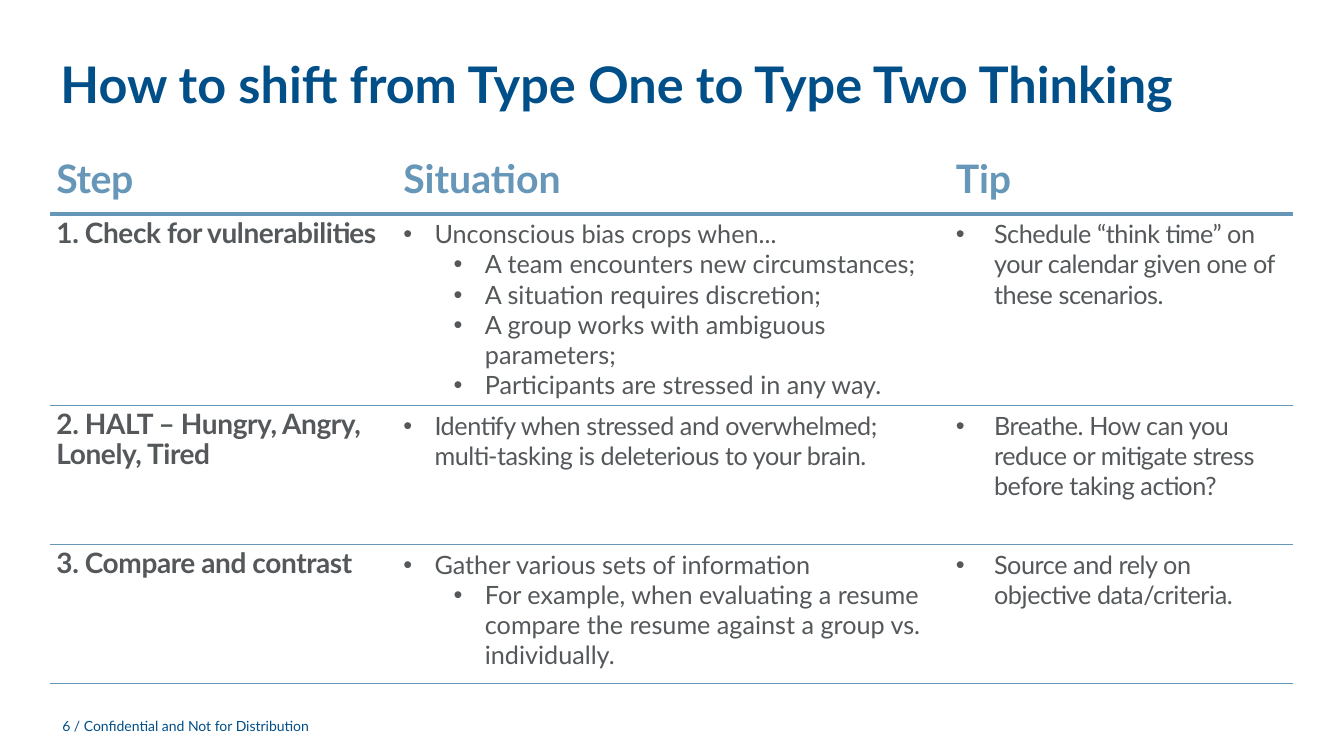
from lxml import etree
from pptx import Presentation
from pptx.dml.color import RGBColor
from pptx.enum.text import MSO_ANCHOR, PP_ALIGN
from pptx.oxml.ns import qn
from pptx.util import Inches, Pt

LEFT = PP_ALIGN.LEFT
TOP = MSO_ANCHOR.TOP
MIDDLE = MSO_ANCHOR.MIDDLE
TITLE_ONLY = 5
FONT = "Lato"
TIGHT = -30
COLORS = {"navy": "014F88", "blue": "6696B8", "gray": "54585A"}

COLUMN_WIDTHS = [3.44, 5.48, 3.4]
ROW_HEIGHTS = [0.66, 1.89, 1.38, 1.38]
HEADINGS = ["Step", "Situation", "Tip"]
STEPS = [
    (
        "1. Check for vulnerabilities",
        [
            "Unconscious bias crops when...",
            "A team encounters new circumstances;",
            "A situation requires discretion;",
            "A group works with ambiguous parameters;",
            "Participants are stressed in any way.",
        ],
        "Schedule “think time” on your calendar given one of these scenarios.",
    ),
    (
        "2. HALT – Hungry, Angry, Lonely, Tired",
        ["Identify when stressed and overwhelmed; multi-tasking is deleterious to your brain."],
        "Breathe. How can you reduce or mitigate stress before taking action?",
    ),
    (
        "3. Compare and contrast",
        [
            "Gather various sets of information",
            "For example, when evaluating a resume compare the resume against a group vs. individually.",
        ],
        "Source and rely on objective data/criteria.",
    ),
]


def style(paragraph, size, color, bold=False, tracking=0):
    paragraph.alignment = LEFT
    font = paragraph.font
    font.name = FONT
    font.size = Pt(size)
    font.bold = bold
    font.color.rgb = RGBColor.from_string(COLORS[color])
    if tracking:
        paragraph._p.pPr.find(qn("a:defRPr")).set("spc", str(tracking))


def add_bullet(paragraph, indent, hanging):
    properties = paragraph._p.get_or_add_pPr()
    properties.set("marL", str(Inches(indent)))
    properties.set("indent", str(-Inches(hanging)))
    etree.SubElement(properties, qn("a:buFont")).set("typeface", "Arial")
    etree.SubElement(properties, qn("a:buChar")).set("char", "•")


def set_borders(cell, top, bottom):
    properties = cell._tc.get_or_add_tcPr()
    widths = {"a:lnL": 0, "a:lnR": 0, "a:lnT": top, "a:lnB": bottom}
    for position, (tag, width) in enumerate(widths.items()):
        line = etree.Element(qn(tag), w=str(Pt(width)))
        if width:
            fill = etree.SubElement(line, qn("a:solidFill"))
            etree.SubElement(fill, qn("a:srgbClr")).set("val", COLORS["blue"])
        else:
            etree.SubElement(line, qn("a:noFill"))
        properties.insert(position, line)


def prepare_cell(cell, row):
    cell.margin_left = cell.margin_right = Inches(0.06)
    cell.margin_top = cell.margin_bottom = Inches(0.05)
    cell.vertical_anchor = TOP if row else MIDDLE
    cell.fill.background()
    top = {0: 0, 1: 3}.get(row, 0.5)
    set_borders(cell, top, 0.5 if row else 3)


def fill_label(cell, text, size, color, tracking):
    paragraph = cell.text_frame.paragraphs[0]
    paragraph.text = text
    paragraph.line_spacing = 0.9
    style(paragraph, size, color, True, tracking)


def fill_situation(cell, lines, tracking):
    cell.text = "\n".join(lines)
    for index, paragraph in enumerate(cell.text_frame.paragraphs):
        paragraph.level = min(index, 1)
        add_bullet(paragraph, 0.81 if index else 0.31, 0.31)
        style(paragraph, 18, "gray", tracking=tracking)


def fill_tip(cell, text):
    paragraph = cell.text_frame.paragraphs[0]
    paragraph.text = text
    add_bullet(paragraph, 0.38, 0.38)
    style(paragraph, 18, "gray", tracking=TIGHT)


def add_title(page, left, top, width, height):
    title = page.shapes.title
    title.left, title.top = Inches(left), Inches(top)
    title.width, title.height = Inches(width), Inches(height)
    frame = title.text_frame
    frame.text = "How to shift from Type One to Type Two Thinking"
    frame.vertical_anchor = TOP
    frame.word_wrap = True
    paragraph = frame.paragraphs[0]
    paragraph.line_spacing = 0.9
    style(paragraph, 36, "navy", True)


def add_steps_table(page, left, top, width, height):
    frame = page.shapes.add_table(
        len(ROW_HEIGHTS), len(COLUMN_WIDTHS),
        Inches(left), Inches(top), Inches(width), Inches(height),
    )
    table = frame.table
    table.first_row = table.horz_banding = False
    for column, column_width in zip(table.columns, COLUMN_WIDTHS):
        column.width = Inches(column_width)
    for index, (row, row_height) in enumerate(zip(table.rows, ROW_HEIGHTS)):
        row.height = Inches(row_height)
        for cell in row.cells:
            prepare_cell(cell, index)
    for column, heading in enumerate(HEADINGS):
        fill_label(table.cell(0, column), heading, 28, "blue", 0 if column else TIGHT)
    for row, (step, situation, tip) in enumerate(STEPS, 1):
        fill_label(table.cell(row, 0), step, 20, "gray", TIGHT)
        fill_situation(table.cell(row, 1), situation, TIGHT if len(situation) == 1 else 0)
        fill_tip(table.cell(row, 2), tip)


def add_footer(page, left, top, width, height):
    box = page.shapes.add_textbox(Inches(left), Inches(top), Inches(width), Inches(height))
    frame = box.text_frame
    frame.word_wrap = True
    frame.vertical_anchor = MIDDLE
    frame.text = "6 / Confidential and Not for Distribution"
    style(frame.paragraphs[0], 10, "navy")


def main():
    deck = Presentation()
    deck.slide_width, deck.slide_height = Inches(13.33), Inches(7.5)
    page = deck.slides.add_slide(deck.slide_layouts[TITLE_ONLY])
    add_title(page, 0.5, 0.54, 11.5, 0.79)
    add_steps_table(page, 0.5, 1.46, sum(COLUMN_WIDTHS), sum(ROW_HEIGHTS))
    add_footer(page, 0.52, 7, 2.95, 0.4)
    deck.save("out.pptx")


if __name__ == "__main__":
    main()
